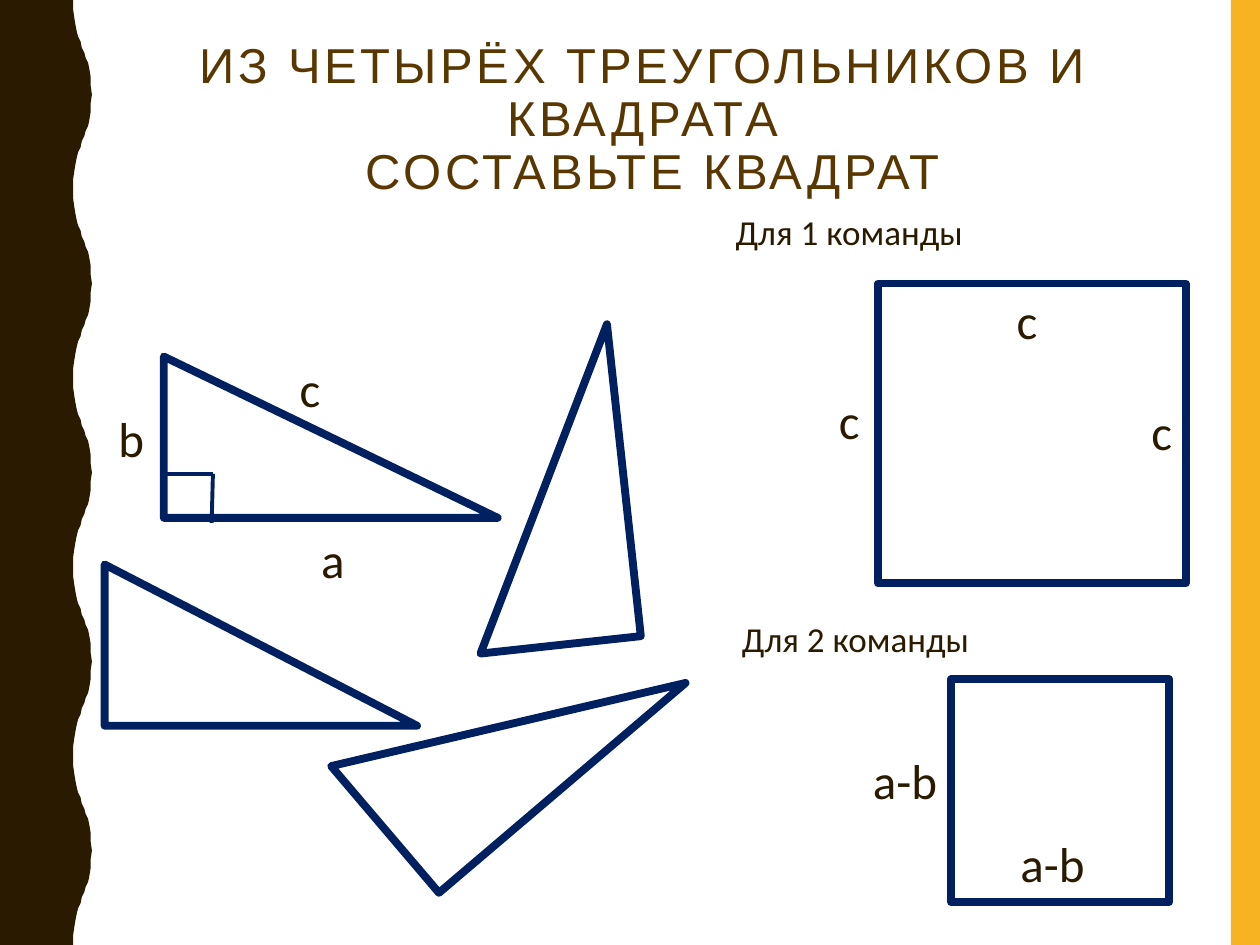
"""Build a slide with a puzzle: make a square from four triangles and a square."""
from dataclasses import dataclass

from lxml.etree import SubElement
from pptx import Presentation
from pptx.dml.color import RGBColor as RGB
from pptx.enum.shapes import MSO_CONNECTOR as CONN, MSO_SHAPE as SHAPE
from pptx.enum.text import MSO_ANCHOR as ANCHOR, MSO_AUTO_SIZE as AUTO, PP_ALIGN as ALIGN
from pptx.oxml.ns import qn
from pptx.util import Pt


@dataclass(frozen=True)
class Theme:
    dark: RGB = RGB.from_string("2A1A00")
    gold: RGB = RGB.from_string("F8B323")
    title: RGB = RGB.from_string("593700")
    outline: RGB = RGB.from_string("002060")
    title_font: str = "Arial"
    body_font: str = "Calibri"
    large: int = 28
    small: int = 20
    thick: float = 4.5
    thin: float = 2.25


T = Theme()
PX = 9144
W, H = 1000, 750

TITLE = "ИЗ ЧЕТЫРЁХ ТРЕУГОЛЬНИКОВ И КВАДРАТА\v СОСТАВЬТЕ КВАДРАТ"
TITLE_BOX = (98, 21, 827, 150)
GOLD_BAR = (977, 0, 23, H)
HALF_WAVE = [(58, 0), (58, 7), (59, 14), (60, 20), (61, 25), (62, 29), (64, 33), (65, 38),
             (67, 42), (68, 46), (70, 50), (71, 55), (72, 61), (72, 68), (73, 75)]
WAVE = 150
TRIANGLES = [
    ((130, 283, 265, 128), 0),
    ((307, 324, 249, 128), 263.8),
    ((83, 448, 248, 128), 0),
    ((275, 509, 257, 132), 319.6),
]
SQUARES = [(697, 225, 244, 238), (755, 539, 173, 177)]
RIGHT_ANGLE = [(130, 376), (169, 376), (168, 415)]
SIDES = [
    ("c", (228, 280, 37, 57)),
    ("b", (84, 319, 41, 57)),
    ("a", (245, 415, 39, 57)),
    ("c", (904, 314, 37, 57)),
    ("c", (797, 226, 37, 57)),
    ("c", (656, 305, 37, 57)),
    ("а-b", (683, 591, 72, 57)),
    ("а-b", (800, 657, 72, 57)),
]
TEAMS = [
    ("Для 1 команды", (574, 162, 202, 44)),
    ("Для 2 команды", (579, 485, 202, 44)),
]


def emu(values):
    return [v * PX for v in values]


def paint(sp, color):
    sp.shadow.inherit = False
    sp.fill.solid()
    sp.fill.fore_color.rgb = color
    sp.line.fill.background()


def stroke(line, width):
    line.color.rgb = T.outline
    line.width = Pt(width)


def style(p, name, size, color):
    p.font.name, p.font.size, p.font.color.rgb = name, Pt(size), color


def add_wavy_edge(s):
    crest = HALF_WAVE + [(x, WAVE - y) for x, y in HALF_WAVE[-2:0:-1]]
    edge = [(x, y + top) for top in range(0, H, WAVE) for x, y in crest]
    fb = s.shapes.build_freeform(0, 0, scale=PX)
    fb.add_line_segments(edge + [(HALF_WAVE[0][0], H), (0, H)], close=True)
    paint(fb.convert_to_shape(), T.dark)


def add_outline(s, kind, box, angle=0):
    sp = s.shapes.add_shape(kind, *emu(box))
    sp.shadow.inherit = False
    sp.fill.background()
    stroke(sp.line, T.thick)
    sp.rotation = angle


def add_line(s, start, end):
    cx = s.shapes.add_connector(CONN.STRAIGHT, *emu(start + end))
    stroke(cx.line, T.thin)
    SubElement(cx._element.spPr, qn("a:effectLst"))


def add_label(s, text, box, size):
    tf = s.shapes.add_textbox(*emu(box)).text_frame
    tf.word_wrap = False
    tf.auto_size = AUTO.SHAPE_TO_FIT_TEXT
    p = tf.paragraphs[0]
    p.text = text
    style(p, T.body_font, size, T.dark)


def set_title(s):
    sp = s.shapes.title
    sp.left, sp.top, sp.width, sp.height = emu(TITLE_BOX)
    tf = sp.text_frame
    tf.auto_size = AUTO.NONE
    tf.word_wrap = True
    tf.vertical_anchor = ANCHOR.MIDDLE
    p = tf.paragraphs[0]
    p.text = TITLE
    p.alignment = ALIGN.CENTER
    p.line_spacing = 0.9
    style(p, T.title_font, T.large, T.title)
    for r in p.runs:
        r._r.get_or_add_rPr().set("spc", "200")


def main():
    prs = Presentation()
    prs.slide_width, prs.slide_height = emu((W, H))
    s = prs.slides.add_slide(prs.slide_layouts[5])
    add_wavy_edge(s)
    paint(s.shapes.add_shape(SHAPE.RECTANGLE, *emu(GOLD_BAR)), T.gold)
    set_title(s)
    for box, angle in TRIANGLES:
        add_outline(s, SHAPE.RIGHT_TRIANGLE, box, angle)
    for box in SQUARES:
        add_outline(s, SHAPE.RECTANGLE, box)
    for start, end in zip(RIGHT_ANGLE, RIGHT_ANGLE[1:]):
        add_line(s, start, end)
    for labels, size in ((SIDES, T.large), (TEAMS, T.small)):
        for text, box in labels:
            add_label(s, text, box, size)
    prs.save("out.pptx")


if __name__ == "__main__":
    main()
